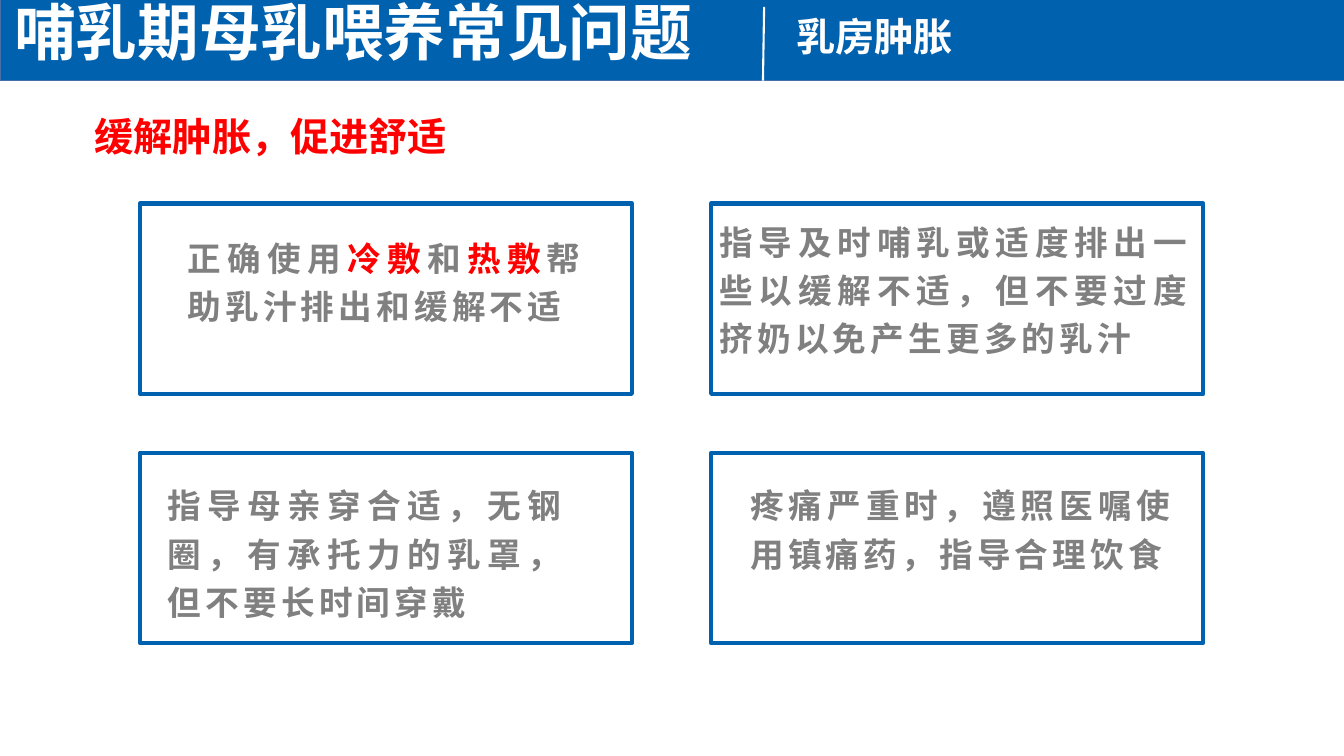
from collections import namedtuple
from dataclasses import dataclass
from lxml.etree import SubElement
from pptx import Presentation
from pptx.dml.color import RGBColor as RGB
from pptx.enum.shapes import MSO_CONNECTOR as Conn, MSO_SHAPE as Shape
from pptx.enum.text import MSO_ANCHOR as Anchor, MSO_AUTO_SIZE as Fit, PP_ALIGN as Align
from pptx.oxml.ns import qn
from pptx.util import Inches, Pt


@dataclass(frozen=True)
class Theme:
    blue: RGB = RGB(0x00, 0x61, 0xAE)
    edge: RGB = RGB(0x47, 0x6F, 0xAA)
    white: RGB = RGB(0xFF, 0xFF, 0xFF)
    red: RGB = RGB(0xFF, 0x00, 0x00)
    grey: RGB = RGB(0x80, 0x80, 0x80)
    cjk: str = "Noto Sans CJK SC"
    latin: str = "Arial"
    title: int = 44
    heading: int = 28
    body: int = 24


T = Theme()
WIDTH, HEIGHT = Inches(13.333), Inches(7.5)
COL, ROW = WIDTH / 96, HEIGHT / 54
Box = namedtuple("Box", "x y w h")
Card = namedtuple("Card", "inset runs")

CARDS = [
    Card(Box(3.4, 1.87, 28.37, 8),
         ["正确使用", "冷敷", "和", "热敷", "帮助乳汁排出和缓解不适"]),
    Card(Box(0.6, 0.7, 33.7, 10.44),
         ["指导及时哺乳或适度排出一些以缓解不适，但不要过度挤奶以免产生更多的乳汁"]),
    Card(Box(2, 1.73, 28.37, 10.44),
         ["指导母亲穿合适，无钢圈，有承托力的乳罩，但不要长时间穿戴"]),
    Card(Box(2.8, 1.73, 30.31, 7),
         ["疼痛严重时，遵照医嘱使用镇痛药，指导合理饮食"]),
]
HOT_WORDS = {"冷敷", "热敷"}


def emu(box):
    return [round(v * unit) for v, unit in zip(box, (COL, ROW, COL, ROW))]


def inside(outer, inner):
    return Box(outer.x + inner.x, outer.y + inner.y, inner.w, inner.h)


def set_font(p, size, color, name=T.cjk, spacing=None):
    f = p.font
    f.size, f.bold, f.name = Pt(size), True, name
    f.color.rgb = color
    props = p._p.pPr.find(qn("a:defRPr"))
    SubElement(props, qn("a:ea")).set("typeface", T.cjk)
    if spacing:
        props.set("spc", str(spacing * 100))


def add_rect(s, box, line, weight, fill=None):
    sp = s.shapes.add_shape(Shape.RECTANGLE, *emu(box))
    sp.shadow.inherit = False
    sp.line.color.rgb, sp.line.width = line, Pt(weight)
    if fill is None:
        sp.fill.background()
    else:
        sp.fill.solid()
        sp.fill.fore_color.rgb = fill
    return sp


def add_text(s, box):
    tf = s.shapes.add_textbox(*emu(box)).text_frame
    tf.word_wrap = True
    return tf


def add_label(s, box, text, color, name=T.cjk):
    p = add_text(s, box).paragraphs[0]
    p.text = text
    set_font(p, T.heading, color, name)


def add_header(s, box):
    bar = add_rect(s, box, T.edge, 1, T.blue)
    s.shapes._spTree.insert(2, bar._element)

    title = s.shapes.title
    title.left, title.top, title.width, title.height = emu(
        inside(box, Box(0.3, -0.13, 54.3, 4.82)))
    tf = title.text_frame
    tf.text = "哺乳期母乳喂养常见问题"
    tf.auto_size, tf.vertical_anchor = Fit.NONE, Anchor.TOP
    p = tf.paragraphs[0]
    p.alignment, p.line_spacing = Align.LEFT, 0.9
    set_font(p, T.title, T.white)

    x, y, w, h = emu(inside(box, Box(54.5, 0.57, 0.08, 5.26)))
    divider = s.shapes.add_connector(Conn.STRAIGHT, x, y + h, x + w, y)
    divider.line.color.rgb, divider.line.width = T.white, Pt(1.5)
    SubElement(divider._element.spPr, qn("a:effectLst"))

    add_label(s, inside(box, Box(56.16, 0.57, 17.42, 4.1)), "乳房肿胀", T.white)


def add_card(s, box, card):
    add_rect(s, box, T.blue, 3)
    tf = add_text(s, inside(box, card.inset))
    tf.margin_left = tf.margin_right = tf.margin_top = tf.margin_bottom = 0
    p = tf.paragraphs[0]
    p.alignment, p.line_spacing, p.space_after = Align.JUSTIFY, 1.2, Pt(8)
    set_font(p, T.body, T.grey, spacing=3)
    for text in card.runs:
        r = p.add_run()
        r.text = text
        if text in HOT_WORDS:
            r.font.color.rgb = T.red


def add_card_grid(s, box, columns=2, gap_x=5.66, gap_y=4.2):
    rows = len(CARDS) // columns
    w = (box.w - gap_x * (columns - 1)) / columns
    h = (box.h - gap_y * (rows - 1)) / rows
    for i, card in enumerate(CARDS):
        row, col = divmod(i, columns)
        cell = Box(box.x + col * (w + gap_x), box.y + row * (h + gap_y), w, h)
        add_card(s, cell, card)


def main():
    prs = Presentation()
    prs.slide_width, prs.slide_height = WIDTH, HEIGHT
    s = prs.slides.add_slide(prs.slide_layouts[5])
    add_header(s, Box(0, -0.07, 96.34, 5.83))
    add_label(s, Box(6.05, 7.7, 31.82, 4.1), "缓解肿胀，促进舒适", T.red, T.latin)
    add_card_grid(s, Box(10, 14.54, 75.94, 31.4))
    prs.save("out.pptx")


if __name__ == "__main__":
    main()
